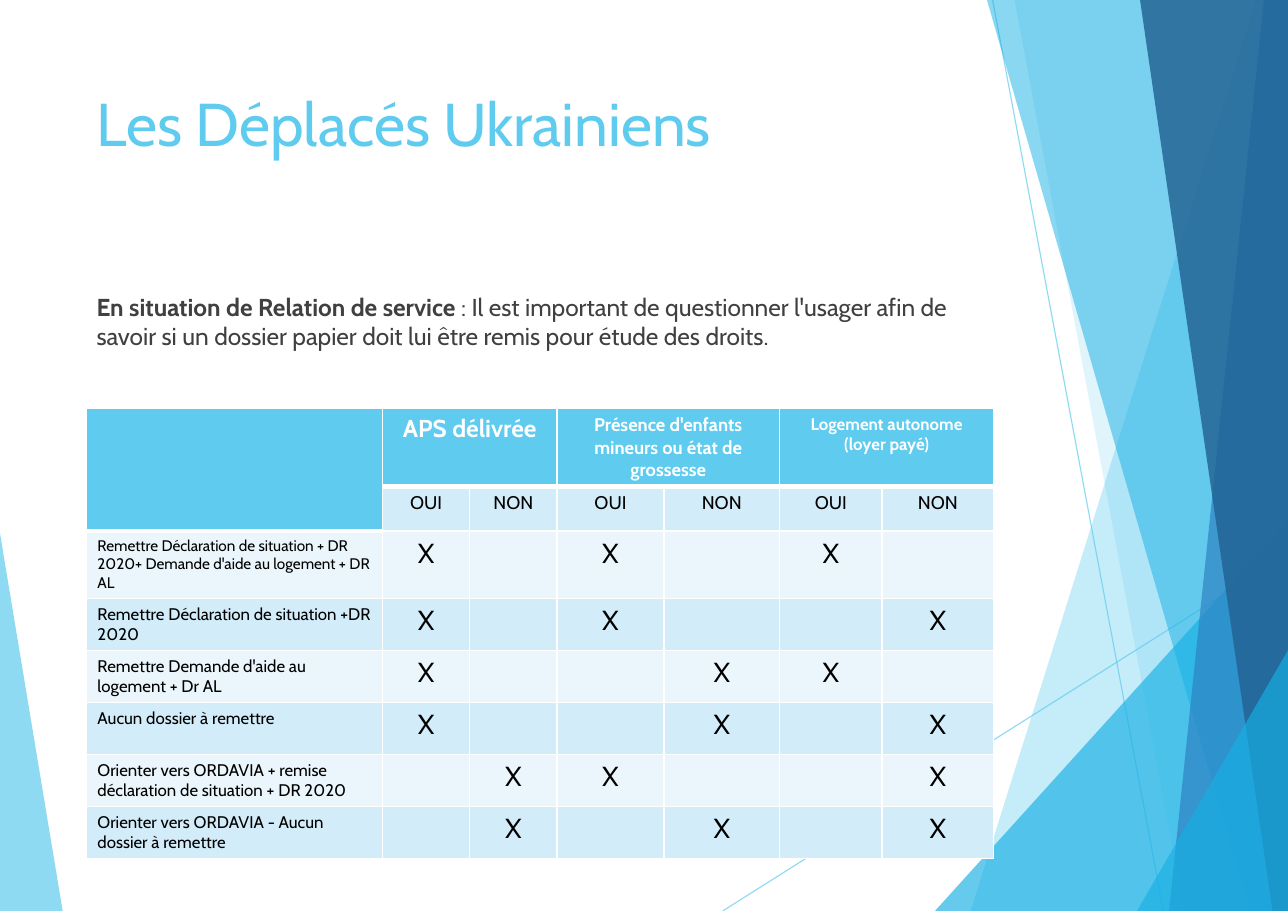
from dataclasses import dataclass

from lxml.etree import SubElement
from pptx import Presentation
from pptx.dml.color import RGBColor
from pptx.enum.text import MSO_ANCHOR, MSO_AUTO_SIZE, PP_ALIGN
from pptx.oxml.ns import qn
from pptx.shapes.connector import Connector
from pptx.slide import Slide
from pptx.table import Table, _Cell as Cell
from pptx.text.text import _Run as Span
from pptx.util import Pt

WIDTH, HEIGHT = 841.68, 595.44
FONT = "Cabin"
SKY, CYAN, BLUE, NAVY = "5FCBEF", "17B0E4", "2E83C3", "226292"
WHITE, BLACK, GREY = "FFFFFF", "000000", "404040"
BANDS = ("EAF6FC", "D2ECF9")

Point = tuple[float, float]


@dataclass
class Panel:
    outline: list[Point]
    color: str
    opacity: int


@dataclass
class Ray:
    start: Point
    end: Point


@dataclass
class Heading:
    text: str
    size: float


@dataclass
class Case:
    label: str
    marks: tuple[int, int, int]  # marked column for each of the three questions
    size: float = 11


def right_panel(top: float, bottom: float, color: str, opacity: int) -> Panel:
    """Full-height panel with a slanted left edge, up to the right of the page."""
    outline = [(top, 0), (bottom, HEIGHT), (WIDTH, HEIGHT), (WIDTH, 0)]
    return Panel(outline, color, opacity)


def corner_panel(left: float, top: float) -> Panel:
    """Triangle in the lower right corner."""
    return Panel([(left, HEIGHT), (WIDTH, top), (WIDTH, HEIGHT)], CYAN, 66)


LEFT_PANEL = Panel([(0, 348.5), (41, HEIGHT), (0, HEIGHT)], SKY, 70)
RAYS = [
    Ray((472.3, HEIGHT), (WIDTH, 362.2)),
    Ray((648.7, 0), (760.3, HEIGHT)),
]
RIGHT_PANELS = [
    right_panel(821, 634.3, SKY, 36),
    right_panel(663, 774, SKY, 20),
    corner_panel(611, 340.5),
    right_panel(645, 816.5, CYAN, 50),
    right_panel(826, 764, BLUE, 70),
    right_panel(745, 831.6, NAVY, 82),
    corner_panel(743, 425),
]

HEADINGS = [
    Heading("APS délivrée", 16),
    Heading("Présence d'enfants mineurs ou état de grossesse", 12),
    Heading("Logement autonome (loyer payé)", 11),
]
CASES = [
    Case("Remettre Déclaration de situation + DR 2020+ Demande d'aide au logement + DR AL",
         (1, 3, 5), 10),
    Case("Remettre Déclaration de situation +DR 2020", (1, 3, 6)),
    Case("Remettre Demande d'aide au logement + Dr AL", (1, 4, 5)),
    Case("Aucun dossier à remettre", (1, 4, 6)),
    Case("Orienter vers ORDAVIA + remise déclaration de situation + DR 2020", (2, 3, 6)),
    Case("Orienter vers ORDAVIA - Aucun dossier à remettre", (2, 4, 6)),
]
COLUMN_WIDTHS = [193.5, 57, 57, 70, 75.5, 67, 73]
ROW_HEIGHTS = [51, 29, 44] + [34] * 5


def rgb(color: str) -> RGBColor:
    return RGBColor.from_string(color)


def style_span(span: Span, size: float, color: str, bold: bool = False) -> None:
    span.font.name = FONT
    span.font.size = Pt(size)
    span.font.bold = bold
    span.font.color.rgb = rgb(color)


def set_opacity(color_parent, percent: int) -> None:
    color = color_parent.find(f".//{qn('a:srgbClr')}")
    SubElement(color, qn("a:alpha"), val=str(percent * 1000))


def draw_panel(page: Slide, panel: Panel) -> None:
    first, *others = [(Pt(x), Pt(y)) for x, y in panel.outline]
    builder = page.shapes.build_freeform(*first, scale=1.0)
    builder.add_line_segments(others, close=True)
    shape = builder.convert_to_shape()
    shape.shadow.inherit = False
    shape.fill.solid()
    shape.fill.fore_color.rgb = rgb(panel.color)
    shape.line.fill.background()
    set_opacity(shape._element.spPr, panel.opacity)


def draw_ray(page: Slide, ray: Ray) -> Connector:
    ends = [Pt(value) for value in (*ray.start, *ray.end)]
    line = page.shapes.add_connector(1, *ends)
    line.line.width = Pt(0.75)
    line.line.color.rgb = rgb(SKY)
    properties = line._element.spPr
    set_opacity(properties, 70)
    SubElement(properties, qn("a:effectLst"))
    return line


def format_cell(cell: Cell, fill: str, bottom: float = 1) -> None:
    properties = cell._tc.get_or_add_tcPr()
    for side, width in (("L", 1), ("R", 1), ("T", 1), ("B", bottom)):
        border = SubElement(properties, qn(f"a:ln{side}"), w=str(Pt(width)))
        paint = SubElement(border, qn("a:solidFill"))
        SubElement(paint, qn("a:srgbClr"), val=WHITE)
    cell.fill.solid()
    cell.fill.fore_color.rgb = rgb(fill)


def write_cell(cell: Cell, text: str, size: float, color: str = BLACK,
               bold: bool = False, align: PP_ALIGN = PP_ALIGN.CENTER) -> None:
    para = cell.text_frame.paragraphs[0]
    para.text = text
    para.alignment = align
    style_span(para.runs[0], size, color, bold)


def fill_header(table: Table) -> None:
    for column in range(len(COLUMN_WIDTHS)):
        format_cell(table.cell(0, column), SKY, bottom=3)
        if column == 0:
            format_cell(table.cell(1, 0), SKY, bottom=3)
        else:
            format_cell(table.cell(1, column), BANDS[1])
            write_cell(table.cell(1, column), "OUI" if column % 2 else "NON", 12)
    table.cell(0, 0).merge(table.cell(1, 0))
    for index, heading in enumerate(HEADINGS):
        column = 1 + 2 * index
        table.cell(0, column).merge(table.cell(0, column + 1))
        write_cell(table.cell(0, column), heading.text, heading.size, WHITE, bold=True)


def draw_table(page: Slide) -> None:
    frame = page.shapes.add_table(
        len(ROW_HEIGHTS), len(COLUMN_WIDTHS), Pt(56.5), Pt(267),
        Pt(sum(COLUMN_WIDTHS)), Pt(sum(ROW_HEIGHTS)))
    table = frame.table
    table.first_row = table.horz_banding = False
    for column, width in zip(table.columns, COLUMN_WIDTHS):
        column.width = Pt(width)
    for row, height in zip(table.rows, ROW_HEIGHTS):
        row.height = Pt(height)
    fill_header(table)
    for index, case in enumerate(CASES):
        row = index + 2
        for column in range(len(COLUMN_WIDTHS)):
            format_cell(table.cell(row, column), BANDS[index % 2])
        write_cell(table.cell(row, 0), case.label, case.size, align=PP_ALIGN.LEFT)
        for column in case.marks:
            write_cell(table.cell(row, column), "X", 18)


def write_title(page: Slide) -> None:
    title = page.shapes.title
    title.left, title.top, title.width, title.height = Pt(56), Pt(52.5), Pt(585), Pt(114.5)
    title.text_frame.text = "Les Déplacés Ukrainiens"
    title.text_frame.vertical_anchor = MSO_ANCHOR.TOP
    title.text_frame.auto_size = MSO_AUTO_SIZE.NONE
    para = title.text_frame.paragraphs[0]
    para.alignment = PP_ALIGN.LEFT
    style_span(para.runs[0], 39.5, SKY)


def write_intro(page: Slide) -> None:
    box = page.shapes.add_textbox(Pt(56), Pt(187.2), Pt(585), Pt(337))
    box.text_frame.word_wrap = True
    para = box.text_frame.paragraphs[0]
    lead, rest = para.add_run(), para.add_run()
    lead.text = "En situation de Relation de service"
    rest.text = (" : Il est important de questionner l'usager afin de savoir "
                 "si un dossier papier doit lui être remis pour étude des droits.")
    style_span(lead, 16, GREY, bold=True)
    style_span(rest, 16, GREY)


def main() -> None:
    deck = Presentation()
    deck.slide_width, deck.slide_height = Pt(WIDTH), Pt(HEIGHT)
    page = deck.slides.add_slide(deck.slide_layouts[5])

    # Background facets
    draw_panel(page, LEFT_PANEL)
    for ray in RAYS:
        draw_ray(page, ray)
    for panel in RIGHT_PANELS:
        draw_panel(page, panel)

    # Content
    write_title(page)
    write_intro(page)
    draw_table(page)

    deck.save("out.pptx")


if __name__ == "__main__":
    main()
